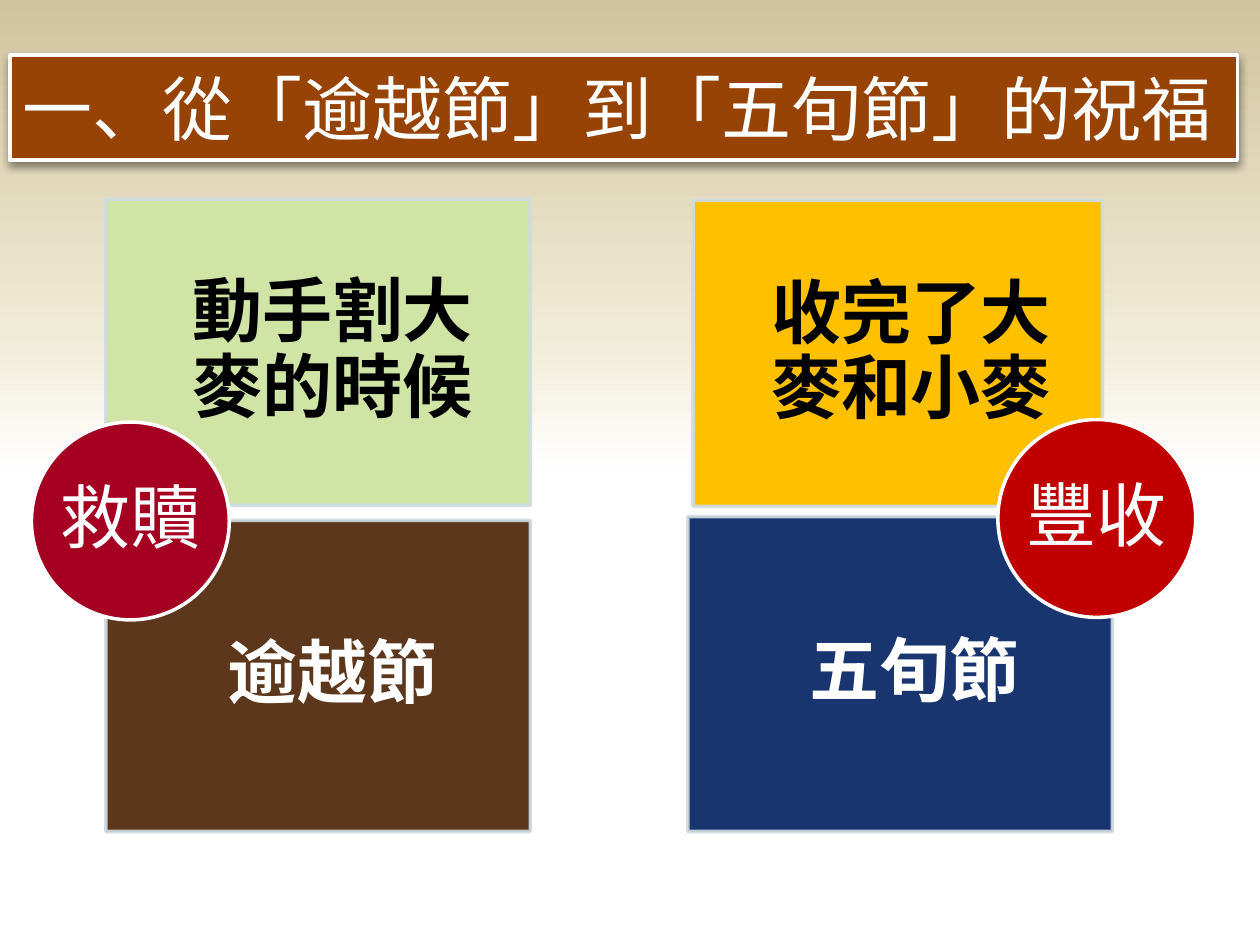
from lxml.etree import SubElement
from pptx import Presentation
from pptx.dml.color import RGBColor
from pptx.enum.shapes import MSO_SHAPE
from pptx.enum.text import MSO_ANCHOR, MSO_AUTO_SIZE, PP_ALIGN
from pptx.oxml import parse_xml
from pptx.oxml.ns import nsdecls, qn
from pptx.util import Inches, Pt

# Content: two feasts, each with a season, a name and a blessing
TITLE = "一、從「逾越節」到「五旬節」的祝福"
TITLE_BOX = (0.08, 0.47, 9.74, 0.77)
# Panels: text, box, fill, text colour, fill opacity
PANELS = [
    ("動手割大麥的時候", (0.84, 1.58, 3.37, 2.43), "D0E4A6", "000000", 100),
    ("逾越節", (0.84, 4.13, 3.37, 2.47), "4B2203", "FFFFFF", 90),
    ("收完了大麥和小麥", (5.5, 1.59, 3.25, 2.43), "FFC000", "000000", 100),
    ("五旬節", (5.46, 4.1, 3.37, 2.5), "002060", "FFFFFF", 90),
]
# Badges: text, left, top, fill
BADGES = [("救贖", 0.25, 3.35, "A50021"), ("豐收", 7.92, 3.33, "C00000")]
BADGE_SIZE = 1.57
BADGE_INSET = 0.23
PANEL_INSET = 0.31
PANEL_INDENT = 0.16  # share of the panel width kept free on the left

THEME = {
    "size": 40, "line_width": 2, "title_font": "Arial", "body_font": "Calibri",
    "title_fill": "964305", "white": "FFFFFF", "panel_line": "CEDCE1",
    "background": [(50, "FFFFFF"), (65, "F0EBD5"), (100, "D1C39F")],
}


def set_opacity(fill, percent):
    color = fill._xPr.find(qn("a:solidFill"))[0]
    SubElement(color, qn("a:alpha"), val=str(percent * 1000))


def paint(shape, fill, line, fill_opacity=100, line_opacity=100):
    shape.fill.solid()
    shape.fill.fore_color.rgb = RGBColor.from_string(fill)
    shape.line.width = Pt(THEME["line_width"])
    shape.line.color.rgb = RGBColor.from_string(line)
    for part, opacity in ((shape.fill, fill_opacity), (shape.line.fill, line_opacity)):
        if opacity < 100:
            set_opacity(part, opacity)


def write(shape, text, font, color, align, bold=False, insets=None):
    frame = shape.text_frame
    frame.text = text
    frame.word_wrap = True
    frame.vertical_anchor = MSO_ANCHOR.MIDDLE
    if insets:
        (frame.margin_left, frame.margin_top,
         frame.margin_right, frame.margin_bottom) = map(Inches, insets)
    paragraph = frame.paragraphs[0]
    paragraph.alignment = align
    run_font = paragraph.runs[0].font
    run_font.name, run_font.size, run_font.bold = font, Pt(THEME["size"]), bold
    run_font.color.rgb = RGBColor.from_string(color)
    return frame


def add_block(slide, kind, box, text, color, bold, insets):
    shape = slide.shapes.add_shape(kind, *map(Inches, box))
    shape.shadow.inherit = False
    frame = write(shape, text, THEME["body_font"], color, PP_ALIGN.CENTER, bold, insets)
    frame.paragraphs[0].line_spacing = 0.9
    return shape


def set_background(slide):
    stops = "".join(
        f'<a:gs pos="{position * 1000}"><a:srgbClr val="{color}"/></a:gs>'
        for position, color in THEME["background"])
    fill = slide.background.fill
    fill.gradient()
    fill.gradient_angle = 90
    stop_list = slide.background._cSld.find(".//" + qn("a:gsLst"))
    stop_list.getparent().replace(
        stop_list, parse_xml(f'<a:gsLst {nsdecls("a")}>{stops}</a:gsLst>'))


def add_title(slide):
    title = slide.shapes.title
    title.left, title.top, title.width, title.height = map(Inches, TITLE_BOX)
    paint(title, THEME["title_fill"], THEME["white"])
    frame = write(title, TITLE, THEME["title_font"], THEME["white"], PP_ALIGN.LEFT)
    frame.word_wrap = False
    frame.auto_size = MSO_AUTO_SIZE.SHAPE_TO_FIT_TEXT
    title._element.spPr.append(parse_xml(
        f'<a:effectLst {nsdecls("a")}>'
        f'<a:outerShdw blurRad="{Pt(5)}" dist="{Pt(2)}" dir="5400000" rotWithShape="0">'
        '<a:srgbClr val="000000"><a:alpha val="43000"/></a:srgbClr>'
        '</a:outerShdw></a:effectLst>'))


def main():
    presentation = Presentation()
    presentation.slide_width, presentation.slide_height = Inches(10), Inches(7.5)
    slide = presentation.slides.add_slide(presentation.slide_layouts[5])
    set_background(slide)
    add_title(slide)

    # Panels
    for text, box, fill, color, opacity in PANELS:
        insets = (box[2] * PANEL_INDENT,) + (PANEL_INSET,) * 3
        panel = add_block(slide, MSO_SHAPE.RECTANGLE, box, text, color, True, insets)
        paint(panel, fill, THEME["panel_line"], opacity, 90)

    # Round badges over the panel corners; the ellipse adds its own text inset
    for text, left, top, fill in BADGES:
        box = (left, top, BADGE_SIZE, BADGE_SIZE)
        badge = add_block(slide, MSO_SHAPE.OVAL, box, text, THEME["white"], False, (0,) * 4)
        paint(badge, fill, THEME["white"])

    presentation.save("out.pptx")


if __name__ == "__main__":
    main()
